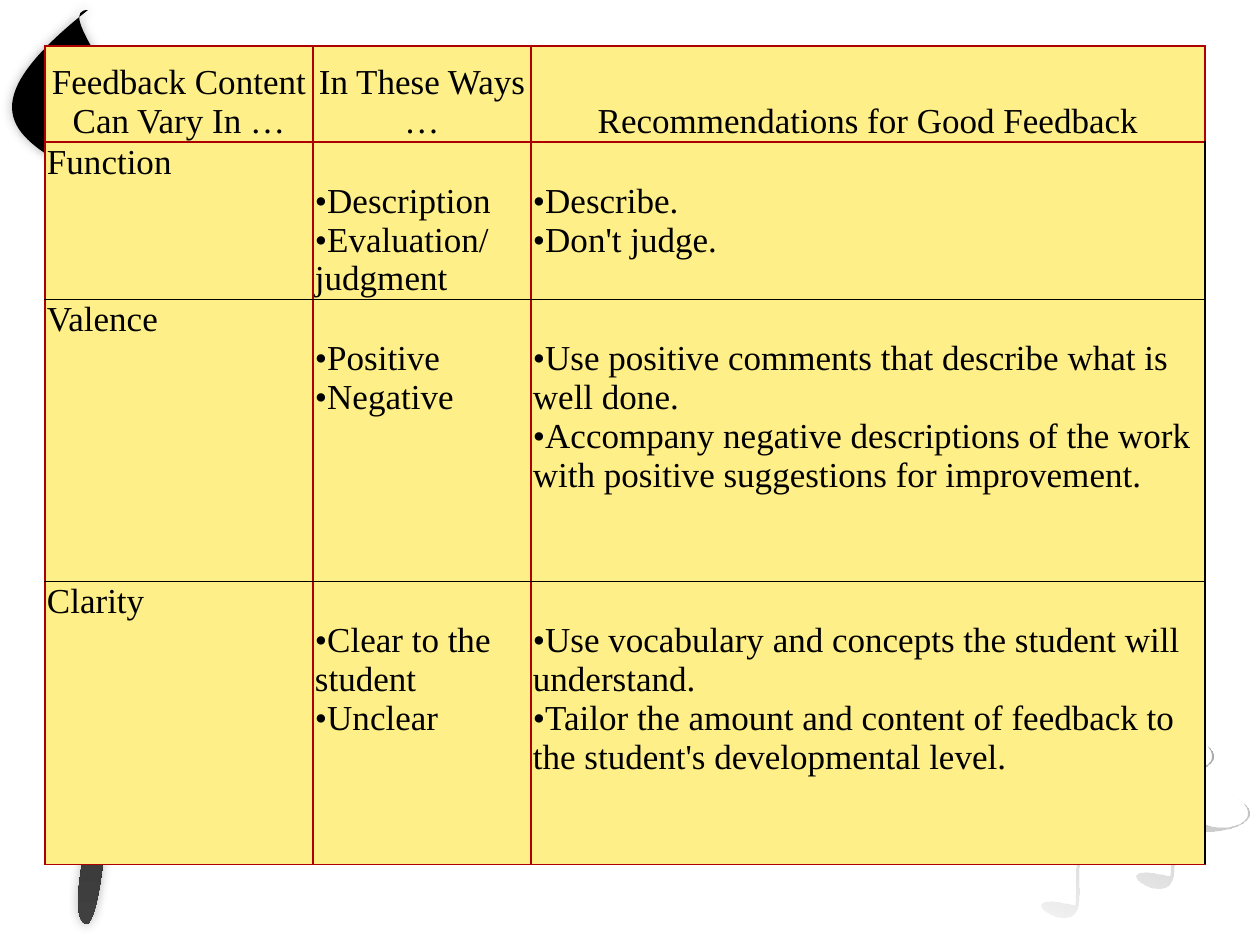
import math

from lxml import etree
from pptx import Presentation
from pptx.dml.color import RGBColor
from pptx.enum.text import MSO_ANCHOR, PP_ALIGN
from pptx.oxml import parse_xml
from pptx.oxml.ns import qn
from pptx.util import Emu, Pt

EMU_PER_PX = 914400 / 126
DRAWING_NS = "http://schemas.openxmlformats.org/drawingml/2006/main"
CENTER, LEFT = PP_ALIGN.CENTER, PP_ALIGN.LEFT
BOTTOM, TOP = MSO_ANCHOR.BOTTOM, MSO_ANCHOR.TOP

BLACK, RED, YELLOW = "000000", "AE0000", "FFEF89"
COLUMN_WIDTHS = [268, 218, 674]
ROW_HEIGHTS = [96, 142, 282, 283]
HEADERS = ["Feedback Content Can Vary In …", "In These Ways …",
           "Recommendations for Good Feedback"]
BODY = [
    ["Function",
     ["•Description", "•Evaluation/", "judgment"],
     ["•Describe.", "•Don't judge."]],
    ["Valence",
     ["•Positive", "•Negative"],
     ["•Use positive comments that describe what is well done.",
      "•Accompany negative descriptions of the work with positive "
      "suggestions for improvement."]],
    ["Clarity",
     ["•Clear to the student", "•Unclear"],
     ["•Use vocabulary and concepts the student will understand.",
      "•Tailor the amount and content of feedback to the student's "
      "developmental level."]],
]

# Each outline is a start point followed by cubic segments of three points.
FEATHER = [(122, 423),
           (134, 222), (71, 372), (69, 372),
           (324, 271), (26, 10), (88, 10),
           (-136, 188), (205, 140), (224, 329),
           (253, 198), (159, 282), (136, 382),
           (113, 480), (120, 887), (88, 924),
           (26, 924), (284, 261), (122, 423)]
NOTE = [(1075, 908),
        (1077, 893), (1072, 853), (1084, 840),
        (1121, 878), (1173, 852), (1142, 832),
        (1183, 857), (1106, 874), (1081, 858),
        (1074, 873), (1082, 902), (1076, 912),
        (1066, 939), (1003, 891), (1075, 908)]
NOTE_CENTER = (1090, 879)
NOTE_ROTATION = 109.4
# Offset of each note, then its opacity at the top and at the bottom
NOTES = [(0, 0, 20, 5), (59, -86, 35, 20), (95, -29, 25, 10)]


def px(length):
    return Emu(round(length * EMU_PER_PX))


def color(hex_string):
    return RGBColor.from_string(hex_string)


def turn_back(points, center, degrees):
    """Undo a clockwise rotation about the center."""
    cosine, sine = math.cos(math.radians(degrees)), math.sin(math.radians(degrees))
    offsets = [(x - center[0], y - center[1]) for x, y in points]
    return [(center[0] + x * cosine + y * sine, center[1] - x * sine + y * cosine)
            for x, y in offsets]


class SlideBuilder:
    font_name = "Times New Roman"
    font_size = Pt(20)

    def __init__(self, slide):
        self.slide = slide

    def curve(self, outline, stops, angle, rotation=0, shadow=False):
        """Draw a closed curve; stops are (position, colour, opacity) in percent."""
        builder = self.slide.shapes.build_freeform(*outline[0], scale=EMU_PER_PX)
        builder.add_line_segments(outline[1:], close=True)
        shape = builder.convert_to_shape()
        shape.rotation = rotation
        self.bend_segments(shape)
        shape.line.fill.background()
        shape.shadow.inherit = False
        gradient = "".join(
            f'<a:gs pos="{position * 1000}"><a:srgbClr val="{hex_string}">'
            f'<a:alpha val="{opacity * 1000}"/></a:srgbClr></a:gs>'
            for position, hex_string, opacity in stops)
        shape.line._ln.addprevious(parse_xml(
            f'<a:gradFill xmlns:a="{DRAWING_NS}" rotWithShape="1"><a:gsLst>'
            f'{gradient}</a:gsLst><a:lin ang="{angle * 60000}" scaled="0"/>'
            '</a:gradFill>'))
        if shadow:
            effects = shape._element.spPr.find(qn("a:effectLst"))
            effects.append(parse_xml(
                f'<a:outerShdw xmlns:a="{DRAWING_NS}" blurRad="{Pt(6)}" dist="0">'
                '<a:srgbClr val="404040"><a:alpha val="40000"/></a:srgbClr>'
                '</a:outerShdw>'))

    @staticmethod
    def bend_segments(shape):
        """Join every three straight segments into one cubic curve."""
        lines = list(shape._element.iter(qn("a:lnTo")))
        for start in range(0, len(lines) - 2, 3):
            curve = etree.Element(qn("a:cubicBezTo"))
            lines[start].addprevious(curve)
            for line in lines[start:start + 3]:
                curve.append(line[0])
                line.getparent().remove(line)

    def table(self, left, top, widths, heights):
        frame = self.slide.shapes.add_table(
            len(heights), len(widths), px(left), px(top),
            px(sum(widths)), px(sum(heights)))
        table = frame.table
        table.first_row = table.horz_banding = False
        for column, width in zip(table.columns, widths):
            column.width = px(width)
        for row, height in zip(table.rows, heights):
            row.height = px(height)
        return table

    def cell(self, cell, lines, borders, align=LEFT, anchor=TOP, margin_top=1):
        """Fill a cell; lines that start with a bullet sign become list items."""
        cell.fill.solid()
        cell.fill.fore_color.rgb = color(YELLOW)
        cell.vertical_anchor = anchor
        cell.margin_left = cell.margin_right = px(2)
        cell.margin_top, cell.margin_bottom = px(margin_top), px(1)
        cell.text_frame.text = "\n".join(line.lstrip("•") for line in lines)
        for paragraph, line in zip(cell.text_frame.paragraphs, lines):
            paragraph.alignment = align
            if line.startswith("•"):
                properties = paragraph._p.get_or_add_pPr()
                properties.set("marL", "0")
                properties.set("indent", "0")
                etree.SubElement(properties, qn("a:buFont"), typeface=self.font_name)
                etree.SubElement(properties, qn("a:buChar"), char="•")
            for run in paragraph.runs:
                run.font.name = self.font_name
                run.font.size = self.font_size
                run.font.color.rgb = color(BLACK)
        for index, (side, hex_string) in enumerate(borders.items()):
            cell._tc.tcPr.insert(index, parse_xml(
                f'<a:ln{side} xmlns:a="{DRAWING_NS}" w="{Pt(1)}"><a:solidFill>'
                f'<a:srgbClr val="{hex_string}"/></a:solidFill></a:ln{side}>'))


def cell_borders(row, column):
    """Red grid, with black rules between body rows and at their right edge."""
    last_row, last_column = len(ROW_HEIGHTS) - 1, len(COLUMN_WIDTHS) - 1
    return {
        "L": RED,
        "R": BLACK if row > 0 and column == last_column else RED,
        "T": BLACK if row > 1 else RED,
        "B": BLACK if 0 < row < last_row else RED,
    }


def main():
    presentation = Presentation()
    presentation.slide_width, presentation.slide_height = px(1260), px(945)
    builder = SlideBuilder(
        presentation.slides.add_slide(presentation.slide_layouts[6]))

    builder.curve(FEATHER, [(25, BLACK, 100), (100, "404040", 100)], 90, shadow=True)
    upright_note = turn_back(NOTE, NOTE_CENTER, NOTE_ROTATION)
    for dx, dy, top_opacity, bottom_opacity in NOTES:
        builder.curve([(x + dx, y + dy) for x, y in upright_note],
                      [(0, BLACK, top_opacity), (100, BLACK, bottom_opacity)],
                      0, rotation=NOTE_ROTATION)

    table = builder.table(45, 46, COLUMN_WIDTHS, ROW_HEIGHTS)
    for column, header in enumerate(HEADERS):
        builder.cell(table.cell(0, column), [header], cell_borders(0, column),
                     align=CENTER, anchor=BOTTOM)
    for row, (topic, *lists) in enumerate(BODY, start=1):
        builder.cell(table.cell(row, 0), [topic], cell_borders(row, 0))
        for column, items in enumerate(lists, start=1):
            builder.cell(table.cell(row, column), items,
                         cell_borders(row, column), margin_top=40)

    presentation.save("out.pptx")


if __name__ == "__main__":
    main()
